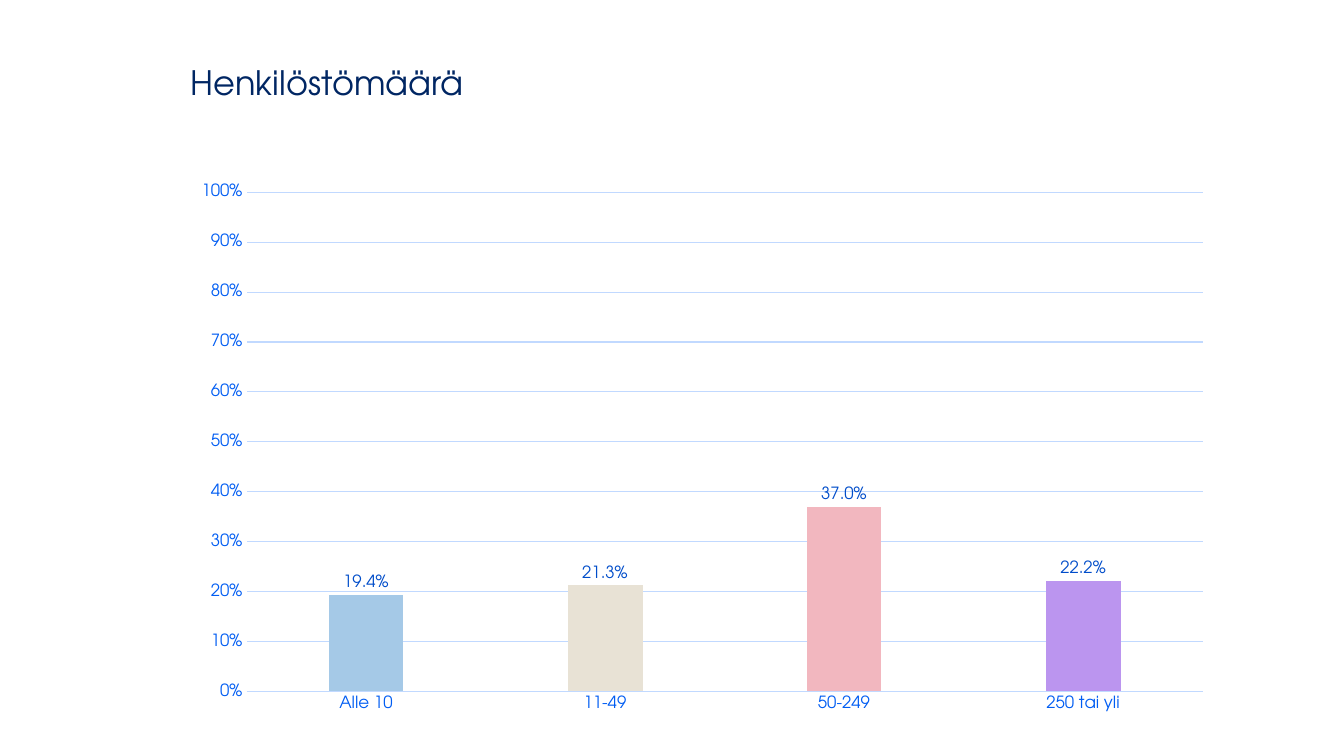
import pptx
import pptx.chart.data
import pptx.dml.color
import pptx.enum.chart
import pptx.enum.text
import pptx.oxml
import pptx.oxml.ns
import pptx.util
from pptx.util import Inches

FONT = "TeX Gyre Adventor"
HEADCOUNT = {"Alle 10": 0.194, "11-49": 0.213, "50-249": 0.37, "250 tai yli": 0.222}
BAR_COLORS = ["A5C9E7", "E8E2D5", "F2B7BF", "BB95EF"]
PLOT_AREA = {"x": 0.064, "y": 0.061, "w": 0.927, "h": 0.869}


def rgb(value):
    """Turn a hex string into a colour."""
    return pptx.dml.color.RGBColor.from_string(value)


def set_font(font, size, color):
    """Apply the slide typeface with a size and colour."""
    font.name = FONT
    font.size = pptx.util.Pt(size)
    font.color.rgb = rgb(color)


def set_line(line, color):
    """Give a line a thin solid stroke."""
    line.color.rgb = rgb(color)
    line.width = pptx.util.Pt(0.75)


def add_title(slide, text):
    """Place and format the title placeholder."""
    sp = slide.shapes.title
    sp.left, sp.top, sp.width, sp.height = map(Inches, (1.79, 0.11, 10.94, 1.45))
    tf = sp.text_frame
    tf.text = text
    tf.vertical_anchor = pptx.enum.text.MSO_ANCHOR.MIDDLE
    p = tf.paragraphs[0]
    p.alignment = pptx.enum.text.PP_ALIGN.LEFT
    p.line_spacing = 0.9
    set_font(p.font, 24, "002663")


def format_axis(axis):
    """Set the shared look of an axis."""
    axis.major_tick_mark = pptx.enum.chart.XL_TICK_MARK.NONE
    axis.minor_tick_mark = pptx.enum.chart.XL_TICK_MARK.NONE
    set_font(axis.tick_labels.font, 12, "005DF3")


def set_plot_layout(chart):
    """Fix the inner plot area as fractions of the chart."""
    plot_area = chart.plots[0]._element.getparent()
    for old in plot_area.findall(pptx.oxml.ns.qn("c:layout")):
        plot_area.remove(old)
    values = "".join(f'<c:{k} val="{v}"/>' for k, v in PLOT_AREA.items())
    plot_area.insert(0, pptx.oxml.parse_xml(
        f'<c:layout {pptx.oxml.ns.nsdecls("c")}><c:manualLayout>'
        '<c:layoutTarget val="inner"/><c:xMode val="edge"/><c:yMode val="edge"/>'
        f'{values}</c:manualLayout></c:layout>'))


def add_column_chart(slide):
    """Add the headcount column chart."""
    data = pptx.chart.data.CategoryChartData(number_format="0.0%")
    data.categories = list(HEADCOUNT)
    data.add_series("Series 1", list(HEADCOUNT.values()))
    chart = slide.shapes.add_chart(
        pptx.enum.chart.XL_CHART_TYPE.COLUMN_CLUSTERED,
        Inches(1.79), Inches(1.56), Inches(10.23), Inches(5.7), data).chart
    chart.has_title = False
    chart.has_legend = False
    set_font(chart.font, 10, "002663")
    set_plot_layout(chart)

    format_axis(chart.category_axis)
    set_line(chart.category_axis.format.line, "C1D9FF")
    axis = chart.value_axis
    format_axis(axis)
    axis.format.line.fill.background()
    axis.minimum_scale, axis.maximum_scale, axis.major_unit = 0, 1, 0.1
    axis.tick_labels.number_format = "0%"
    axis.tick_labels.number_format_is_linked = False
    set_line(axis.major_gridlines.format.line, "C1D9FF")

    plot = chart.plots[0]
    plot.gap_width, plot.overlap = 219, -27
    plot.vary_by_categories = False
    series = plot.series[0]
    for i, color in enumerate(BAR_COLORS):
        fill = series.points[i].format.fill
        fill.solid()
        fill.fore_color.rgb = rgb(color)
    labels = series.data_labels
    labels.show_value = True
    labels.number_format = "0.0%"
    labels.number_format_is_linked = False
    labels.position = pptx.enum.chart.XL_LABEL_POSITION.OUTSIDE_END
    set_font(labels.font, 12, "004DCA")


def main():
    """Build and save the slide."""
    prs = pptx.Presentation()
    prs.slide_width, prs.slide_height = Inches(13.33), Inches(7.5)
    slide = prs.slides.add_slide(prs.slide_layouts[5])
    add_title(slide, "Henkilöstömäärä")
    add_column_chart(slide)
    prs.save("out.pptx")


if __name__ == "__main__":
    main()
